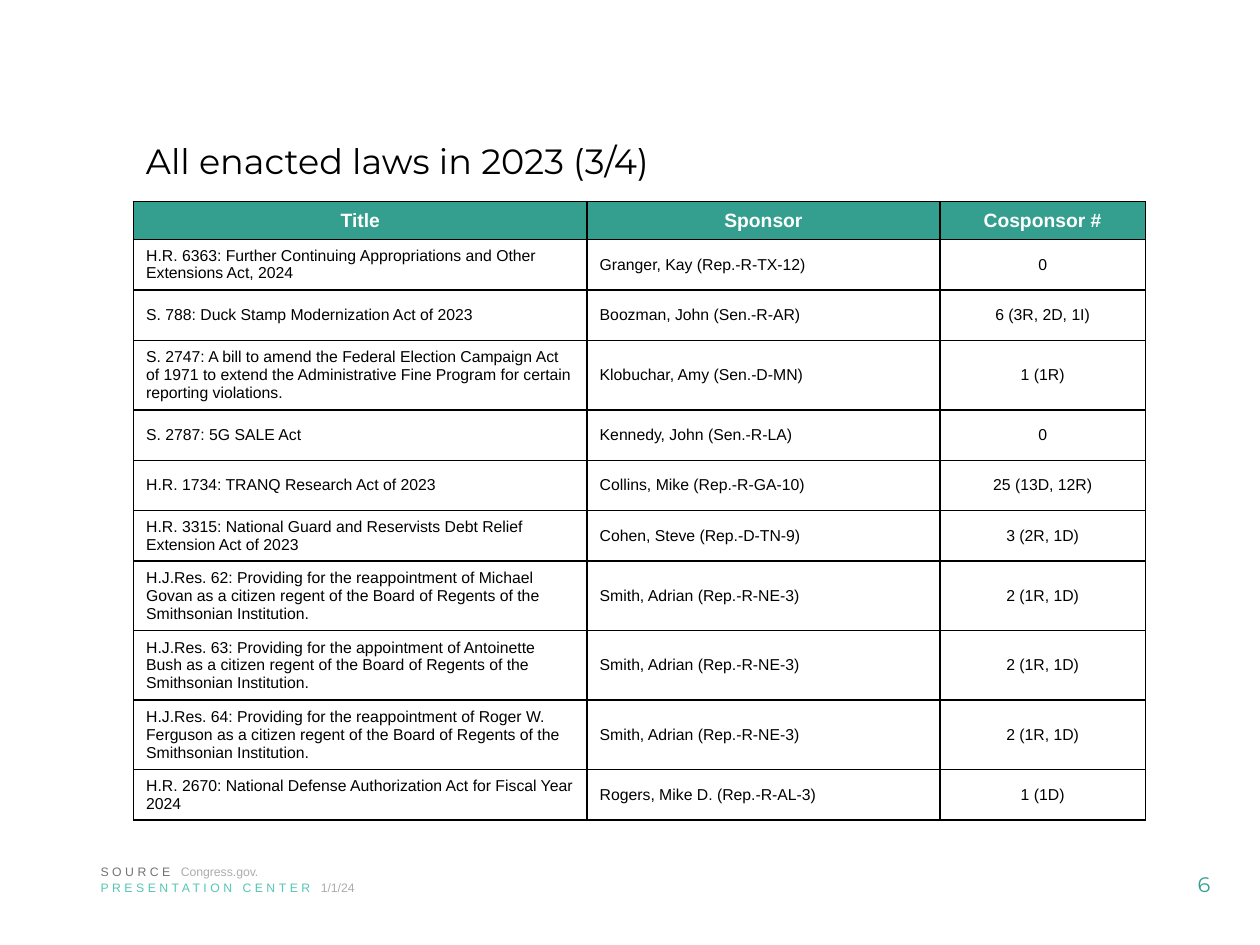
from lxml import etree
from pptx import Presentation
from pptx.dml.color import RGBColor
from pptx.enum.text import MSO_ANCHOR, PP_ALIGN
from pptx.oxml.ns import qn
from pptx.util import Inches, Pt

MIDDLE, TOP = MSO_ANCHOR.MIDDLE, MSO_ANCHOR.TOP
LEFT, CENTER = PP_ALIGN.LEFT, PP_ALIGN.CENTER
WIDTH, HEIGHT = 10, 7.5
GREEN, BLACK, WHITE, GREY = "359F8F", "000000", "FFFFFF", "AFABAB"

COLUMNS = [("Title", 3.6, LEFT), ("Sponsor", 2.8, LEFT), ("Cosponsor #", 1.63, CENTER)]
HEADER_ROW, LAW_ROW = 0.3, 0.4
LAWS = [
    ("H.R. 6363: Further Continuing Appropriations and Other Extensions Act, 2024",
     "Granger, Kay (Rep.-R-TX-12)", "0"),
    ("S. 788: Duck Stamp Modernization Act of 2023",
     "Boozman, John (Sen.-R-AR)", "6 (3R, 2D, 1I)"),
    ("S. 2747: A bill to amend the Federal Election Campaign Act of 1971 to extend "
     "the Administrative Fine Program for certain reporting violations.",
     "Klobuchar, Amy (Sen.-D-MN)", "1 (1R)"),
    ("S. 2787: 5G SALE Act", "Kennedy, John (Sen.-R-LA)", "0"),
    ("H.R. 1734: TRANQ Research Act of 2023",
     "Collins, Mike (Rep.-R-GA-10)", "25 (13D, 12R)"),
    ("H.R. 3315: National Guard and Reservists Debt Relief Extension Act of 2023",
     "Cohen, Steve (Rep.-D-TN-9)", "3 (2R, 1D)"),
    ("H.J.Res. 62: Providing for the reappointment of Michael Govan as a citizen "
     "regent of the Board of Regents of the Smithsonian Institution.",
     "Smith, Adrian (Rep.-R-NE-3)", "2 (1R, 1D)"),
    ("H.J.Res. 63: Providing for the appointment of Antoinette Bush as a citizen "
     "regent of the Board of Regents of the Smithsonian Institution.",
     "Smith, Adrian (Rep.-R-NE-3)", "2 (1R, 1D)"),
    ("H.J.Res. 64: Providing for the reappointment of Roger W. Ferguson as a citizen "
     "regent of the Board of Regents of the Smithsonian Institution.",
     "Smith, Adrian (Rep.-R-NE-3)", "2 (1R, 1D)"),
    ("H.R. 2670: National Defense Authorization Act for Fiscal Year 2024",
     "Rogers, Mike D. (Rep.-R-AL-3)", "1 (1D)"),
]


def color(value):
    """Turn a hex string into a colour."""
    return RGBColor.from_string(value)


def style_font(font, name, size, fill, bold=False):
    """Set the face, size, colour and weight of a font."""
    font.name, font.size, font.bold = name, Pt(size), bold
    font.color.rgb = color(fill)


def add_text_box(page, area, anchor):
    """Add an empty wrapping text box and return its first paragraph."""
    box = page.shapes.add_textbox(*(Inches(length) for length in area))
    frame = box.text_frame
    frame.word_wrap, frame.vertical_anchor = True, anchor
    return frame.paragraphs[0]


def add_heading(page, area, text):
    """Place the slide title."""
    para = add_text_box(page, area, MIDDLE)
    para.text, para.line_spacing = text, 0.9
    style_font(para.font, "Montserrat", 20, BLACK)


def add_page_number(page, area, text):
    """Place the page number."""
    para = add_text_box(page, area, MIDDLE)
    para.text, para.alignment = text, CENTER
    style_font(para.font, "Montserrat", 12, GREEN)


def add_credit(page, area, label, label_color, detail):
    """Place a footer line with a letterspaced label and a grey detail."""
    para = add_text_box(page, area, TOP)
    for text, fill, spacing in ((label + " ", label_color, 200), (detail, GREY, 0)):
        span = para.add_run()
        span.text = text
        style_font(span.font, "Arial", 7, fill)
        span.font._element.set("spc", str(spacing))


def add_borders(cell):
    """Draw a thin black line on every side of a cell."""
    properties = cell._tc.get_or_add_tcPr()
    for side in ("a:lnL", "a:lnR", "a:lnT", "a:lnB"):
        line = etree.SubElement(properties, qn(side), w=str(Pt(1)))
        solid = etree.SubElement(line, qn("a:solidFill"))
        etree.SubElement(solid, qn("a:srgbClr"), val=BLACK)


def fill_cell(cell, text, alignment, is_header):
    """Write and style one table cell."""
    add_borders(cell)
    cell.vertical_anchor = MIDDLE
    para = cell.text_frame.paragraphs[0]
    para.text = text
    para.alignment = CENTER if is_header else alignment
    if is_header:
        cell.fill.solid()
        cell.fill.fore_color.rgb = color(GREEN)
        style_font(para.font, "Arial", 11, WHITE, bold=True)
    else:
        cell.fill.background()
        style_font(para.font, "Arial", 9, BLACK)


def add_law_table(page, left, top):
    """Place the table of laws with its header row."""
    records = [[name for name, _, _ in COLUMNS], *LAWS]
    heights = [HEADER_ROW] + [LAW_ROW] * len(LAWS)
    width = sum(share for _, share, _ in COLUMNS)
    table = page.shapes.add_table(len(records), len(COLUMNS), Inches(left), Inches(top),
                                  Inches(width), Inches(sum(heights))).table
    table.horz_banding = False
    for column, (_, share, _) in zip(table.columns, COLUMNS):
        column.width = Inches(share)
    for index, (record, height) in enumerate(zip(records, heights)):
        table.rows[index].height = Inches(height)
        for position, (text, (_, _, alignment)) in enumerate(zip(record, COLUMNS)):
            fill_cell(table.cell(index, position), text, alignment, index == 0)


def main():
    """Build and save the slide."""
    deck = Presentation()
    deck.slide_width, deck.slide_height = Inches(WIDTH), Inches(HEIGHT)
    page = deck.slides.add_slide(deck.slide_layouts[6])
    add_page_number(page, (9.11, 6.82, 0.89, 0.4), "6")
    add_heading(page, (1.06, 0.9, 8.03, 0.79), "All enacted laws in 2023 (3/4)")
    add_law_table(page, 1.06, 1.6)
    add_credit(page, (0.7, 6.94, 2.94, 0.22), "PRESENTATION CENTER", "55C6B5", "1/1/24")
    add_credit(page, (0.7, 6.81, 6.71, 0.22), "SOURCE", "767171", "Congress.gov.")
    deck.save("out.pptx")


if __name__ == "__main__":
    main()
